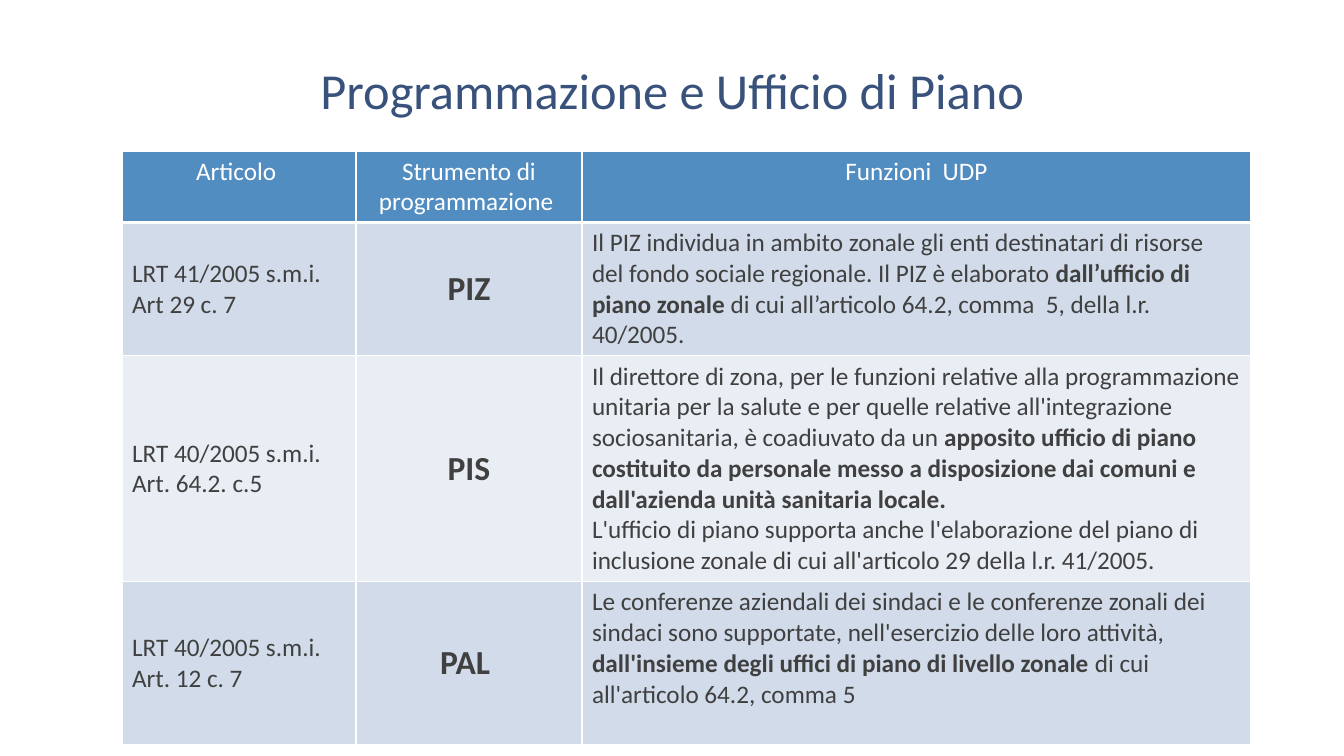
from lxml import etree
from pptx import Presentation
from pptx import util as u
from pptx.dml.color import RGBColor
from pptx.enum import text
from pptx.oxml import ns

EMU_PER_PX = 914400 / 100.8
FONT = "Calibri"
WHITE, NAVY, BLUE, GREY = "FFFFFF", "39527B", "528DC2", "404040"
BANDS = ["D1DBE9", "E9EEF4"]
CENTER, LEFT = text.PP_ALIGN.CENTER, text.PP_ALIGN.LEFT
TOP, MIDDLE = text.MSO_ANCHOR.TOP, text.MSO_ANCHOR.MIDDLE

# Each paragraph is a list of (text, bold) spans
HEADERS = ["Articolo ", "Strumento di programmazione ", "Funzioni  UDP"]
PLANS = [
    (["LRT 41/2005 s.m.i.", "Art 29 c. 7"], "PIZ", [[
        ("Il PIZ individua in ambito zonale gli enti destinatari di risorse del fondo "
         "sociale regionale. Il PIZ è elaborato ", False),
        ("dall’ufficio di piano zonale", True),
        (" di cui all’articolo 64.2, comma  5, della l.r. 40/2005.", False),
    ]], MIDDLE),
    (["LRT 40/2005 s.m.i.", "Art. 64.2. c.5"], "PIS", [[
        ("Il direttore di zona, per le funzioni relative alla programmazione unitaria per "
         "la salute e per quelle relative all'integrazione sociosanitaria, è coadiuvato "
         "da un ", False),
        ("apposito ufficio di piano costituito da personale messo a disposizione dai "
         "comuni e dall'azienda unità sanitaria locale.", True),
    ], [
        ("L'ufficio di piano supporta anche l'elaborazione del piano di inclusione zonale "
         "di cui all'articolo 29 della l.r. 41/2005.", False),
    ]], MIDDLE),
    (["LRT 40/2005 s.m.i.", "Art. 12 c. 7"], "PAL ", [[
        ("Le conferenze aziendali dei sindaci e le conferenze zonali dei sindaci sono "
         "supportate, nell'esercizio delle loro attività, ", False),
        ("dall'insieme degli uffici di piano di livello zonale ", True),
        ("di cui all'articolo 64.2, comma 5", False),
    ]], TOP),
]


def px(length):
    return u.Emu(round(length * EMU_PER_PX))


def color(value):
    return RGBColor.from_string(value)


def write(frame, paragraphs, size, ink, align):
    for index, spans in enumerate(paragraphs):
        para = frame.paragraphs[0] if index == 0 else frame.add_paragraph()
        para.alignment = align
        for words, bold in spans:
            span = para.add_run()
            span.text = words
            font = span.font
            font.name, font.size, font.bold = FONT, u.Pt(size), bold
            font.color.rgb = color(ink)


def set_borders(cell, bottom):
    properties = cell._tc.get_or_add_tcPr()
    sides = {"lnL": 1, "lnR": 1, "lnT": 1, "lnB": bottom}
    for index, (side, points) in enumerate(sides.items()):
        line = etree.Element(ns.qn("a:" + side), w=str(u.Pt(points)))
        fill = etree.SubElement(line, ns.qn("a:solidFill"))
        etree.SubElement(fill, ns.qn("a:srgbClr"), val=WHITE)
        properties.insert(index, line)


def fill_cell(cell, paragraphs, fill, size=18, ink=GREY, align=LEFT, anchor=MIDDLE, bottom=1):
    cell.fill.solid()
    cell.fill.fore_color.rgb = color(fill)
    cell.vertical_anchor = anchor
    set_borders(cell, bottom)
    write(cell.text_frame, paragraphs, size, ink, align)


def place_title(page, left, top, width, height):
    title = page.shapes.title
    title.left, title.top, title.width, title.height = map(px, (left, top, width, height))
    frame = title.text_frame
    frame.word_wrap = True
    frame.auto_size = text.MSO_AUTO_SIZE.NONE
    frame.vertical_anchor = text.MSO_ANCHOR.BOTTOM
    write(frame, [[("Programmazione e Ufficio di Piano", False)]], 36, NAVY, CENTER)
    frame.paragraphs[0].line_spacing = 0.8


def place_plans(page, left, top, widths, heights):
    frame = page.shapes.add_table(len(heights), len(widths), px(left), px(top),
                                  px(sum(widths)), px(sum(heights)))
    table = frame.table
    for column, width in zip(table.columns, widths):
        column.width = px(width)
    for row, height in zip(table.rows, heights):
        row.height = px(height)

    # Header row
    for column, header in enumerate(HEADERS):
        fill_cell(table.cell(0, column), [[(header, False)]], BLUE, ink=WHITE,
                  align=CENTER, anchor=TOP, bottom=3)

    # One row per planning tool
    for row, (article, tool, duties, anchor) in enumerate(PLANS, start=1):
        band = BANDS[(row - 1) % 2]
        fill_cell(table.cell(row, 0), [[(line, False)] for line in article], band)
        fill_cell(table.cell(row, 1), [[(tool, True)]], band, size=24, align=CENTER)
        fill_cell(table.cell(row, 2), duties, band, anchor=anchor)


def main():
    deck = Presentation()
    deck.slide_width, deck.slide_height = px(1344), px(756)
    page = deck.slides.add_slide(deck.slide_layouts[5])
    place_title(page, 93, 14, 1159, 110)
    place_plans(page, 122, 151, [234, 226, 669], [71, 130, 226, 163])
    deck.save("out.pptx")


if __name__ == "__main__":
    main()
